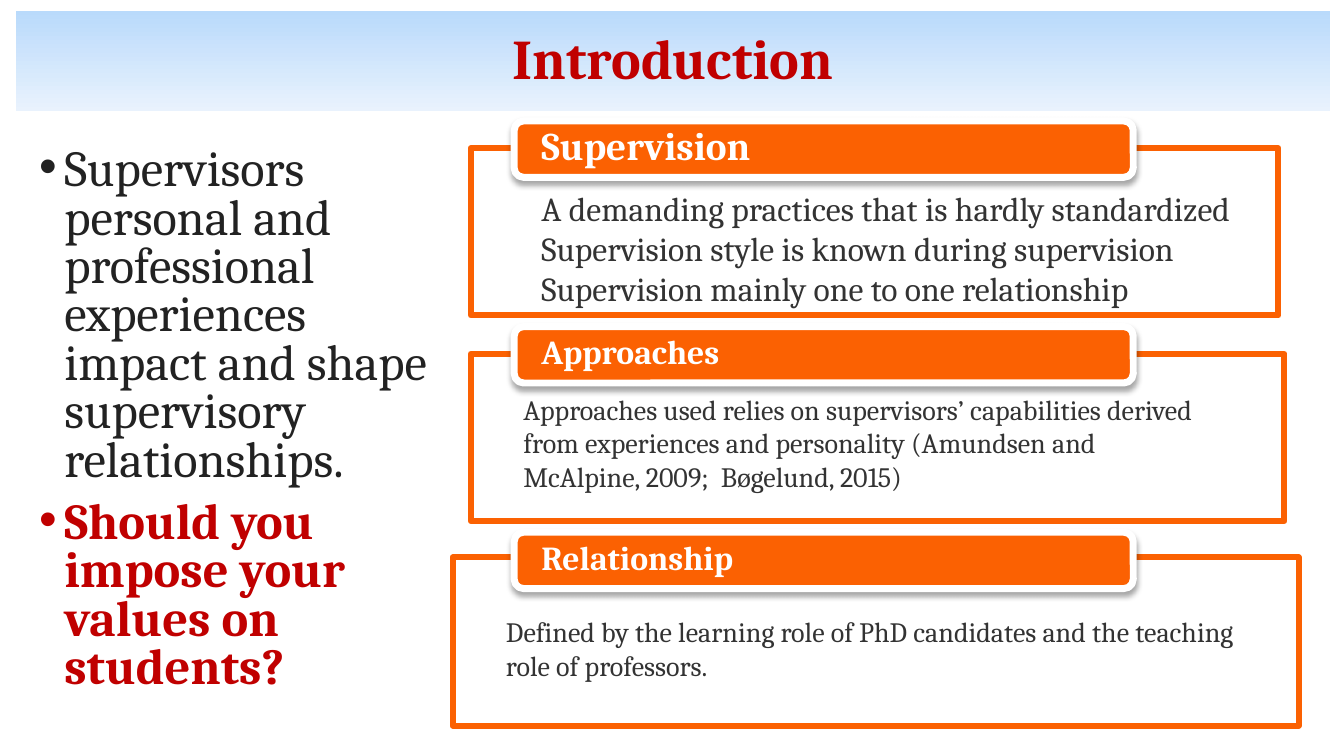
from lxml import etree
from pptx import Presentation
from pptx.dml.color import RGBColor
from pptx.enum.shapes import MSO_SHAPE as Shape
from pptx.enum.text import MSO_ANCHOR as Anchor, PP_ALIGN as Align
from pptx.oxml.ns import qn
from pptx.util import Inches, Pt

ORANGE, RED, WHITE, DARK, BLACK = "FB6102", "C00000", "FFFFFF", "333333", "222222"
FONT = "Cambria"
FIRST_TAB, CARD_STEP = 1.2, 2.04
TAB_LEFT, TAB_WIDTH, TAB_HEIGHT = 5.1, 6.14, 0.56

# Each card: heading, heading size, frame box, text box, text insets, text size, lines
CARDS = [
    ("Supervision", 28, (4.67, 1.47, 8.01, 1.66), (4.67, 1.47, 8.39, 1.66),
     (0.7, 0.39, 0.7, 0.13), 24,
     ["A demanding practices that is hardly standardized",
      "Supervision style is known during supervision",
      "Supervision mainly one to one relationship"]),
    ("Approaches", 24, (4.67, 3.51, 8.07, 1.66), (4.49, 3.5, 8.25, 1.66),
     (0.7, 0.39, 0.7, 0.13), 20,
     ["Approaches used relies on supervisors’ capabilities derived from experiences "
      "and personality (Amundsen and McAlpine, 2009; \u00a0Bøgelund, 2015)"]),
    ("Relationship", 24, (4.49, 5.53, 8.39, 1.67), (4.92, 6.05, 7.82, 0.77),
     (0.1, 0.05, 0.1, 0.05), 20,
     ["Defined by the learning role of PhD candidates and the teaching role of professors."]),
]


def color(value):
    return RGBColor.from_string(value)


def add_child(parent, tag, **attributes):
    return etree.SubElement(parent, qn(tag), attributes)


def add_box(page, kind, box, fill=None, line=None, width=0):
    shape = page.shapes.add_shape(kind, *map(Inches, box))
    shape.shadow.inherit = False
    if fill:
        shape.fill.solid()
        shape.fill.fore_color.rgb = color(fill)
    if line:
        shape.line.color.rgb = color(line)
        shape.line.width = Pt(width)
    else:
        shape.line.fill.background()
    return shape


def set_insets(frame, insets):
    frame.word_wrap = True
    (frame.margin_left, frame.margin_top,
     frame.margin_right, frame.margin_bottom) = map(Inches, insets)


def write(frame, lines, size, ink, bold=False):
    for index, line in enumerate(lines):
        para = frame.paragraphs[0] if index == 0 else frame.add_paragraph()
        para.text = line
        para.font.name, para.font.size, para.font.bold = FONT, Pt(size), bold
        para.font.color.rgb = color(ink)


def add_text(page, box, insets, lines, size, ink, bold=False):
    frame = page.shapes.add_textbox(*map(Inches, box)).text_frame
    set_insets(frame, insets)
    write(frame, lines, size, ink, bold)
    return frame


def add_title(page, box):
    banner = add_box(page, Shape.RECTANGLE, box)
    banner.fill.gradient()
    banner.fill.gradient_angle = 270
    for stop, value in zip(banner.fill.gradient_stops, ("B9DAFB", "E9F2FD")):
        stop.color.rgb = color(value)
    frame = banner.text_frame
    frame.vertical_anchor = Anchor.MIDDLE
    set_insets(frame, (0.1, 0.1, 0.1, 0.1))
    write(frame, ["Introduction"], 40, RED, True)
    frame.paragraphs[0].alignment = Align.CENTER
    frame.paragraphs[0].line_spacing = 0.9


def add_points(page, box):
    frame = add_text(page, box, (0.1, 0.05, 0.1, 0.05),
                     ["Supervisors personal and professional experiences impact "
                      "and shape supervisory relationships.",
                      "Should you impose your values on students?"], 36, BLACK)
    for para in frame.paragraphs:
        para.line_spacing = 0.8
        para.space_before = Pt(10)
        properties = para._p.get_or_add_pPr()
        properties.set("marL", str(Inches(0.25)))
        properties.set("indent", str(-Inches(0.25)))
        bullet = etree.Element(qn("a:buFont"), typeface="Arial")
        spacing = properties.find(qn("a:spcBef"))
        spacing.addnext(bullet)
        bullet.addnext(etree.Element(qn("a:buChar"), char="•"))
    question = frame.paragraphs[1].font
    question.bold, question.color.rgb = True, color(RED)


def add_tab(page, box, heading, size):
    tab = add_box(page, Shape.ROUNDED_RECTANGLE, box, ORANGE, WHITE, 5)
    tab.adjustments[0] = 0.167
    # Soft shadow straight below the tab
    effects = tab._element.spPr.find(qn("a:effectLst"))
    shadow = add_child(effects, "a:outerShdw", blurRad=str(Pt(4)), dist=str(Pt(3)),
                       dir="5400000", algn="ctr", rotWithShape="0")
    tint = add_child(shadow, "a:srgbClr", val="000000")
    add_child(tint, "a:alpha", val="34000")

    left, top, width, height = box
    label = (left + 0.03, top + 0.02, width - 0.05, height - 0.06)
    frame = add_text(page, label, (0.24, 0, 0.24, 0), [heading], size, WHITE, True)
    frame.vertical_anchor = Anchor.MIDDLE
    frame.paragraphs[0].line_spacing = 0.9


def add_card(page, tab_box, heading, heading_size, frame_box, text_box, insets, size, lines):
    panel = add_box(page, Shape.RECTANGLE, frame_box, WHITE, ORANGE, 4.33)
    tint = panel._element.spPr.find(qn("a:solidFill"))[0]
    add_child(tint, "a:alpha", val="89000")
    add_text(page, text_box, insets, lines, size, DARK)
    add_tab(page, tab_box, heading, heading_size)


def main():
    deck = Presentation()
    deck.slide_width, deck.slide_height = Inches(13.33), Inches(7.5)
    page = deck.slides.add_slide(deck.slide_layouts[6])
    add_points(page, (0.29, 1.42, 4.27, 5.77))
    add_title(page, (0.16, 0.11, 13.03, 0.99))
    for row, card in enumerate(CARDS):
        tab_box = (TAB_LEFT, FIRST_TAB + row * CARD_STEP, TAB_WIDTH, TAB_HEIGHT)
        add_card(page, tab_box, *card)
    deck.save("out.pptx")


if __name__ == "__main__":
    main()
